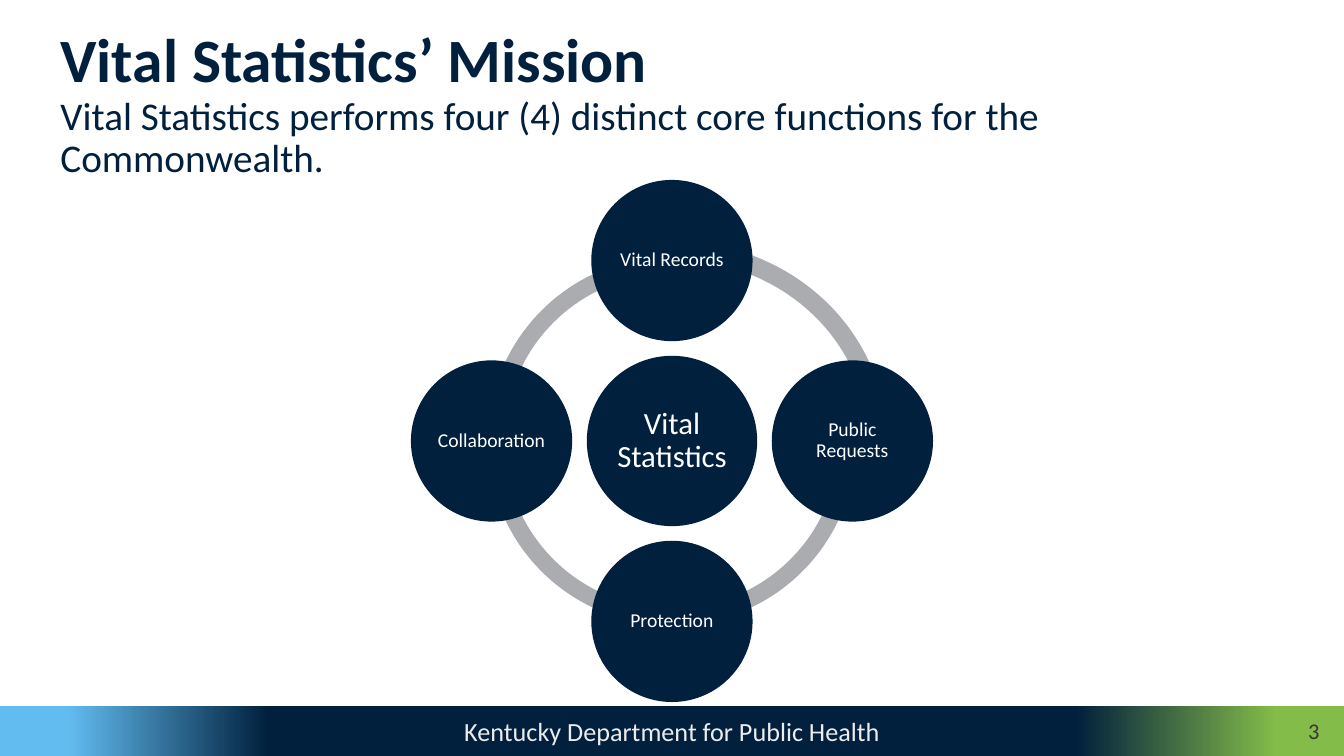
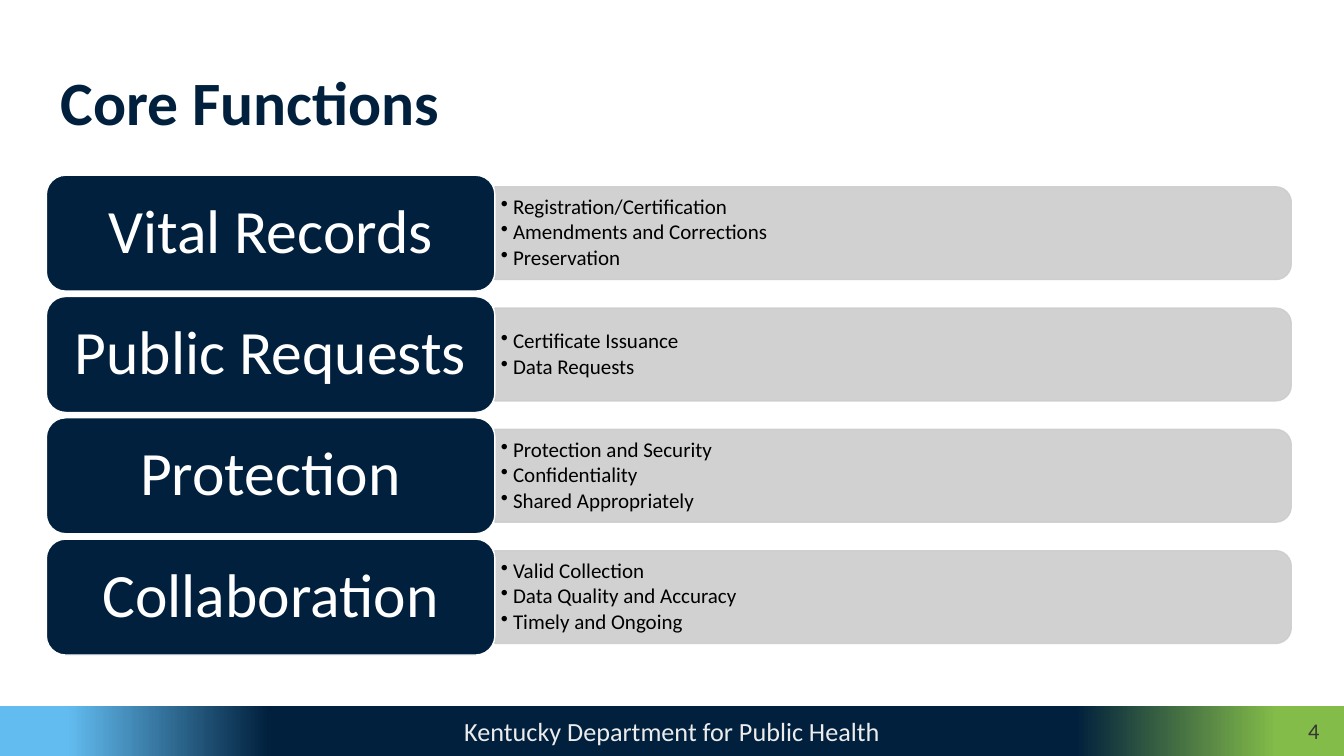
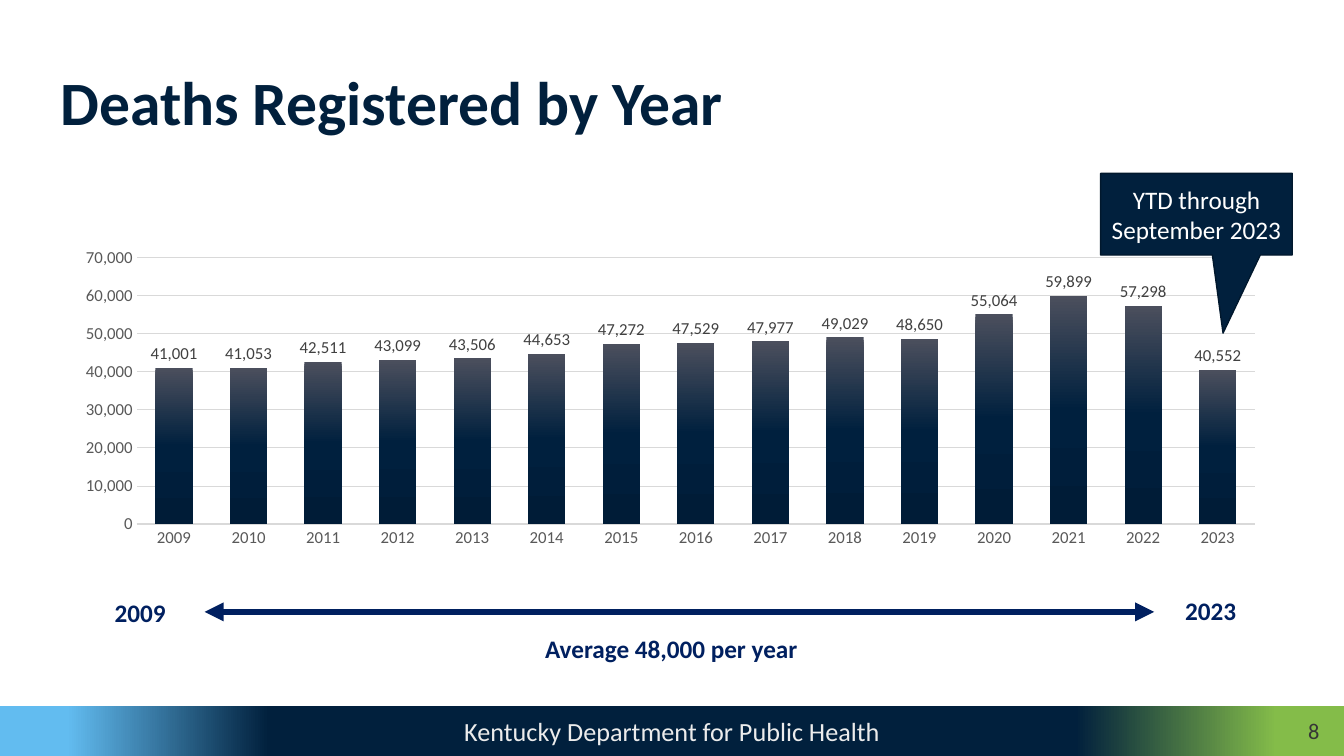
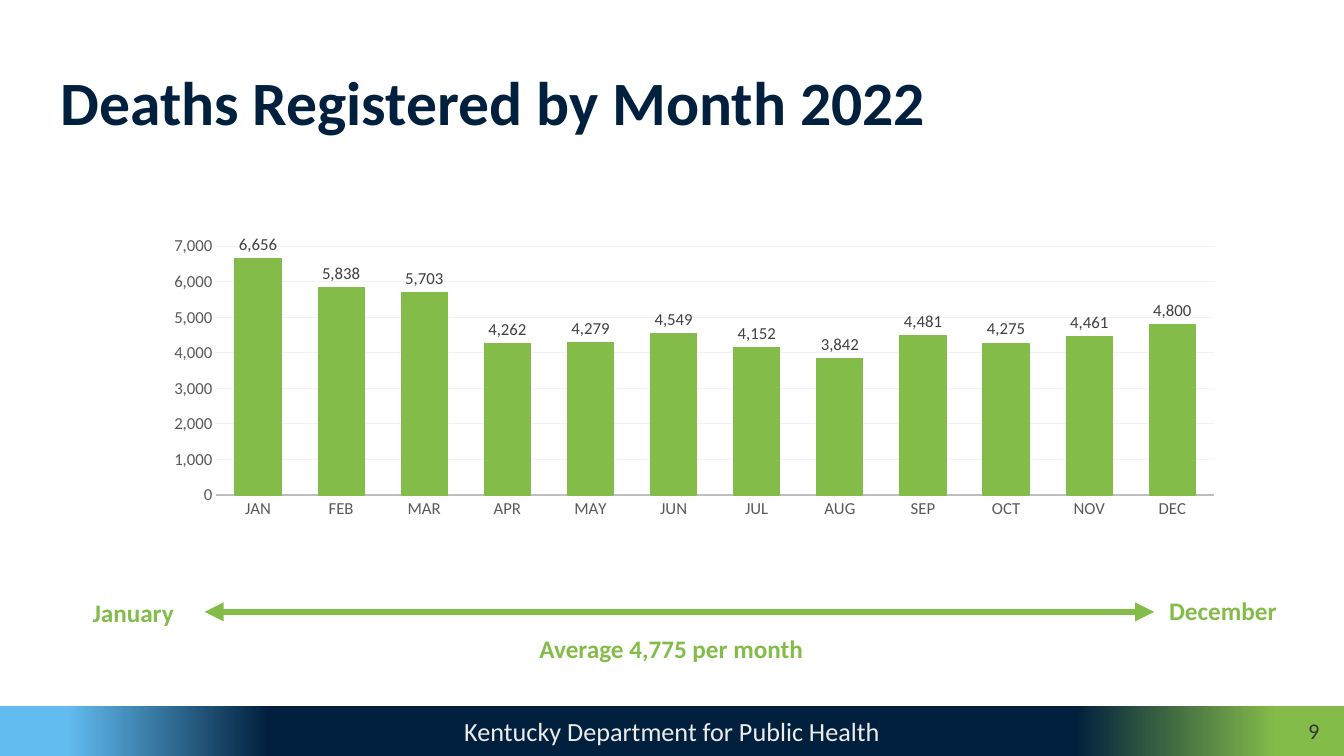
"""Builds four slides on vital statistics with python-pptx."""
from math import cos, radians, sin

from lxml.etree import SubElement
from pptx import Presentation
from pptx.chart.data import CategoryChartData
from pptx.dml.color import RGBColor
from pptx.enum.chart import XL_CHART_TYPE as ChartType
from pptx.enum.chart import XL_LABEL_POSITION as LabelPosition
from pptx.enum.chart import XL_TICK_MARK as TickMark
from pptx.enum.shapes import MSO_CONNECTOR as Connector
from pptx.enum.shapes import MSO_SHAPE as Shape
from pptx.enum.text import MSO_ANCHOR as Anchor
from pptx.enum.text import MSO_AUTO_SIZE as AutoSize
from pptx.enum.text import PP_ALIGN as Align
from pptx.oxml.ns import qn
from pptx.util import Emu, Pt

COLUMNS, ROWS, CELL = 80, 45, 152400
FONT = "Calibri"
COLORS = {
    "navy": "01203D", "navy edge": "01182D", "sky": "62BCF0", "green": "84BC49",
    "royal": "002060", "white": "FFFFFF", "black": "000000", "footer": "ECECEC",
    "number": "363636", "ring": "ABACAF", "bar": "CCCDCE", "axis": "595959",
    "label": "404040", "grid": "D9D9D9", "pale grid": "F2F2F2", "base": "BFBFBF",
    "slate": "4B4F5D", "deep": "00203E", "deepest": "001C37",
}


def color(name):
    return RGBColor.from_string(COLORS[name])


def cells(*lengths):
    return [Emu(round(length * CELL)) for length in lengths]


def style_font(font, size, name, bold=False):
    font.name, font.size, font.bold = FONT, Pt(size), bold
    font.color.rgb = color(name)


def style_line(line, name, width):
    line.color.rgb = color(name)
    line.width = Pt(width)


def write(frame, text, size=18, name="white", bold=False, align=Align.LEFT,
          anchor=Anchor.TOP, spacing=None, after=0, bullet=None, insets=None):
    frame.word_wrap = True
    frame.auto_size = AutoSize.NONE
    frame.vertical_anchor = anchor
    if insets:
        across, down = cells(*insets)
        frame.margin_left = frame.margin_right = across
        frame.margin_top = frame.margin_bottom = down
    lines = [text] if isinstance(text, str) else text
    for index, line in enumerate(lines):
        paragraph = frame.add_paragraph() if index else frame.paragraphs[0]
        paragraph.alignment = align
        paragraph.space_after = Pt(after)
        if spacing:
            paragraph.line_spacing = spacing
        if bullet:
            properties = paragraph._p.get_or_add_pPr()
            indent = cells(0.72)[0]
            properties.set("marL", str(indent))
            properties.set("indent", str(-indent))
            SubElement(properties, qn("a:buChar"), char=bullet)
        run = paragraph.add_run()
        run.text = line
        style_font(run.font, size, name, bold)


def fill_gradient(fill, root, stops, angle):
    fill.gradient()
    fill.gradient_angle = angle
    stop_list = root.find(".//" + qn("a:gsLst"))
    for stop in list(stop_list):
        stop_list.remove(stop)
    for position, name in stops:
        stop = SubElement(stop_list, qn("a:gs"), pos=str(position * 1000))
        SubElement(stop, qn("a:srgbClr"), val=COLORS[name])


class Deck:
    def __init__(self):
        self.presentation = Presentation()
        self.presentation.slide_width, self.presentation.slide_height = cells(COLUMNS, ROWS)
        self.slide = None

    def start(self, number, heading, subtitle=None):
        self.slide = self.presentation.slides.add_slide(self.presentation.slide_layouts[5])
        band = self.shape(Shape.RECTANGLE, 0, 42, COLUMNS, 3)
        stops = [(5, "sky"), (20, "navy"), (80, "navy"), (95, "green")]
        fill_gradient(band.fill, band.element, stops, 0)
        write(band.text_frame, "Kentucky Department for Public Health", size=18.7,
              name="footer", align=Align.CENTER, anchor=Anchor.MIDDLE)
        self.text(str(number), 74.58, 42.66, 4.56, 1.68, size=16, name="number",
                  align=Align.RIGHT, anchor=Anchor.MIDDLE)
        title = self.slide.shapes.title
        title.left, title.top, title.width, title.height = cells(3, 3.06, 74, 6.42)
        frame = title.text_frame
        write(frame, heading, size=44, name="navy", bold=True, anchor=Anchor.MIDDLE,
              spacing=0.9)
        if subtitle:
            paragraph = frame.paragraphs[0]
            paragraph.add_line_break()
            run = paragraph.add_run()
            run.text = subtitle
            style_font(run.font, 28, "navy")

    def shape(self, kind, left, top, width, height, fill="navy", line=None, line_width=1,
              adjustments=()):
        shape = self.slide.shapes.add_shape(kind, *cells(left, top, width, height))
        shape.shadow.inherit = False
        shape.fill.solid()
        shape.fill.fore_color.rgb = color(fill)
        if line:
            style_line(shape.line, line, line_width)
        else:
            shape.line.fill.background()
        for index, value in enumerate(adjustments):
            shape.adjustments[index] = value
        return shape

    def centered(self, kind, x, y, width, height, **style):
        return self.shape(kind, x - width / 2, y - height / 2, width, height, **style)

    def text(self, text, left, top, width, height, **style):
        box = self.slide.shapes.add_textbox(*cells(left, top, width, height))
        write(box.text_frame, text, **style)

    def disc(self, text, x, y, diameter, size):
        disc = self.centered(Shape.OVAL, x, y, diameter, diameter)
        write(disc.text_frame, text, size=size, align=Align.CENTER, anchor=Anchor.MIDDLE,
              spacing=0.9, insets=(0.15, 0.15))

    def function_row(self, heading, items, middle):
        left, width, height = 29.46, 47.4, 5.52
        bar = self.centered(Shape.ROUND_2_SAME_RECTANGLE, left + width / 2, middle,
                            height, width, fill="bar", line="bar")
        bar.rotation = 90
        for tint in bar.element.spPr.iter(qn("a:srgbClr")):
            SubElement(tint, qn("a:alpha"), val="90000")
        self.text(items, left, middle - height / 2, width, height, size=15, name="black",
                  anchor=Anchor.MIDDLE, spacing=0.9, after=2, bullet="•",
                  insets=(0.36, 0.18))
        card = self.centered(Shape.ROUNDED_RECTANGLE, 16.11, middle, 26.7, 6.9, line="white")
        write(card.text_frame, heading, size=44, align=Align.CENTER, anchor=Anchor.MIDDLE,
              spacing=0.9, insets=(1.08, 0.54))

    def timeline(self, first, last, average, name):
        arrow = self.slide.shapes.add_connector(
            Connector.STRAIGHT, *cells(12.18, 36.42, 68.7, 36.42))
        style_line(arrow.line, name, 4.5)
        properties = arrow.element.spPr
        for end in ("a:headEnd", "a:tailEnd"):
            SubElement(properties.find(qn("a:ln")), qn(end), type="triangle")
        SubElement(properties, qn("a:effectLst"))
        for (text, left, width), top in zip((first, last), (35.28, 35.16)):
            self.text(text, left, top, width, 3.36, name=name, bold=True)
        self.text(average, 31.14, 37.38, 17.64, 3.36, name=name, bold=True,
                  align=Align.CENTER)

    def columns(self, place, categories, values, plot_area, step, gap, overlap,
                grid, base, base_width):
        data = CategoryChartData()
        data.categories = categories
        data.add_series("Series 1", values)
        chart = self.slide.shapes.add_chart(
            ChartType.COLUMN_CLUSTERED, *cells(*place), data).chart
        chart.has_legend = chart.has_title = False
        style_font(chart.font, 10, "black")

        category_axis, value_axis = chart.category_axis, chart.value_axis
        for axis in (category_axis, value_axis):
            axis.major_tick_mark = axis.minor_tick_mark = TickMark.NONE
            style_font(axis.tick_labels.font, 12, "axis")
        style_line(category_axis.format.line, base, base_width)
        value_axis.format.line.fill.background()
        style_line(value_axis.major_gridlines.format.line, grid, 0.75)
        value_axis.minimum_scale, value_axis.maximum_scale = 0, 7 * step
        value_axis.major_unit = step
        value_axis.tick_labels.number_format = "#,##0"
        value_axis.tick_labels.number_format_is_linked = False

        plot = chart.plots[0]
        plot.vary_by_categories = False
        plot.gap_width, plot.overlap = gap, overlap
        plot.has_data_labels = True
        labels = plot.data_labels
        labels.show_value = True
        labels.position = LabelPosition.OUTSIDE_END
        labels.number_format, labels.number_format_is_linked = "#,##0", False
        style_font(labels.font, 12, "label")

        area = chart.element.find(".//" + qn("c:plotArea"))
        for old in area.findall(qn("c:layout")):
            area.remove(old)
        layout = SubElement(area, qn("c:layout"))
        area.insert(0, layout)
        manual = SubElement(layout, qn("c:manualLayout"))
        settings = [("layoutTarget", "inner"), ("xMode", "edge"), ("yMode", "edge")]
        for tag, value in settings + list(zip("xywh", plot_area)):
            SubElement(manual, qn("c:" + tag), val=str(value))
        return chart


def mission(deck):
    deck.start(3, "Vital Statistics’ Mission",
               "Vital Statistics performs four (4) distinct core functions for the Commonwealth.")
    x, y, orbit = 40, 26.25, 10.74
    for start in (180, 90, 0, 270):
        width, height = (25.56, 23.82) if start == 270 else (21.96, 21.96)
        deck.centered(Shape.BLOCK_ARC, x, y, width, height, fill="ring",
                      adjustments=(start * 0.6, (start + 90) % 360 * 0.6, 0.046))
    deck.disc("Vital Statistics", x, y, 10.14, 22)
    names = ["Vital Records", "Public Requests", "Protection", "Collaboration"]
    for index, name in enumerate(names):
        angle = radians(90 * index - 90)
        deck.disc(name, x + orbit * cos(angle), y + orbit * sin(angle), 9.6, 14)


def core_functions(deck):
    deck.start(4, "Core Functions")
    functions = {
        "Vital Records": ["Registration/Certification", "Amendments and Corrections",
                          "Preservation"],
        "Public Requests": ["Certificate Issuance", "Data Requests"],
        "Protection": ["Protection and Security", "Confidentiality", "Shared Appropriately"],
        "Collaboration": ["Valid Collection", "Data Quality and Accuracy",
                          "Timely and Ongoing"],
    }
    for index, (heading, items) in enumerate(functions.items()):
        deck.function_row(heading, items, 13.88 + 7.22 * index)


def deaths_by_year(deck):
    deck.start(8, "Deaths Registered by Year")
    deaths = [41001, 41053, 42511, 43099, 43506, 44653, 47272, 47529, 47977, 49029,
              48650, 55064, 59899, 57298, 40552]
    chart = deck.columns((4.2, 10.98, 71.58, 22.5), [str(year) for year in range(2009, 2024)],
                         deaths, (0.055, 0.193, 0.93, 0.706), step=10000, gap=100,
                         overlap=-24, grid="grid", base="grid", base_width=1)
    fill_gradient(chart.plots[0].series[0].format.fill, chart.element,
                  [(0, "slate"), (50, "deep"), (100, "deepest")], 270)
    callout = deck.shape(Shape.RECTANGULAR_CALLOUT, 65.52, 10.32, 11.4, 4.86,
                         line="navy edge", adjustments=(0.139, 1.457))
    write(callout.text_frame, "YTD through September 2023", align=Align.CENTER,
          anchor=Anchor.MIDDLE)
    deck.timeline(("2009", 6.24, 5.82), ("2023", 69.96, 5.82),
                  "Average 48,000 per year", "royal")


def deaths_by_month(deck):
    deck.start(9, "Deaths Registered by Month 2022")
    deck.timeline(("January", 4.92, 7.2), ("December", 69, 8.46),
                  "Average 4,775 per month", "green")
    months = "JAN FEB MAR APR MAY JUN JUL AUG SEP OCT NOV DEC".split()
    deaths = [6656, 5838, 5703, 4262, 4279, 4549, 4152, 3842, 4481, 4275, 4461, 4800]
    chart = deck.columns((8.94, 13.74, 64.68, 17.52), months, deaths,
                         (0.061, 0.052, 0.918, 0.846), step=1000, gap=80, overlap=25,
                         grid="pale grid", base="base", base_width=1.25)
    column_format = chart.plots[0].series[0].format
    column_format.fill.solid()
    column_format.fill.fore_color.rgb = color("green")
    style_line(column_format.line, "green", 0.75)


def main():
    deck = Deck()
    for build in (mission, core_functions, deaths_by_year, deaths_by_month):
        build(deck)
    deck.presentation.save("out.pptx")


if __name__ == "__main__":
    main()
